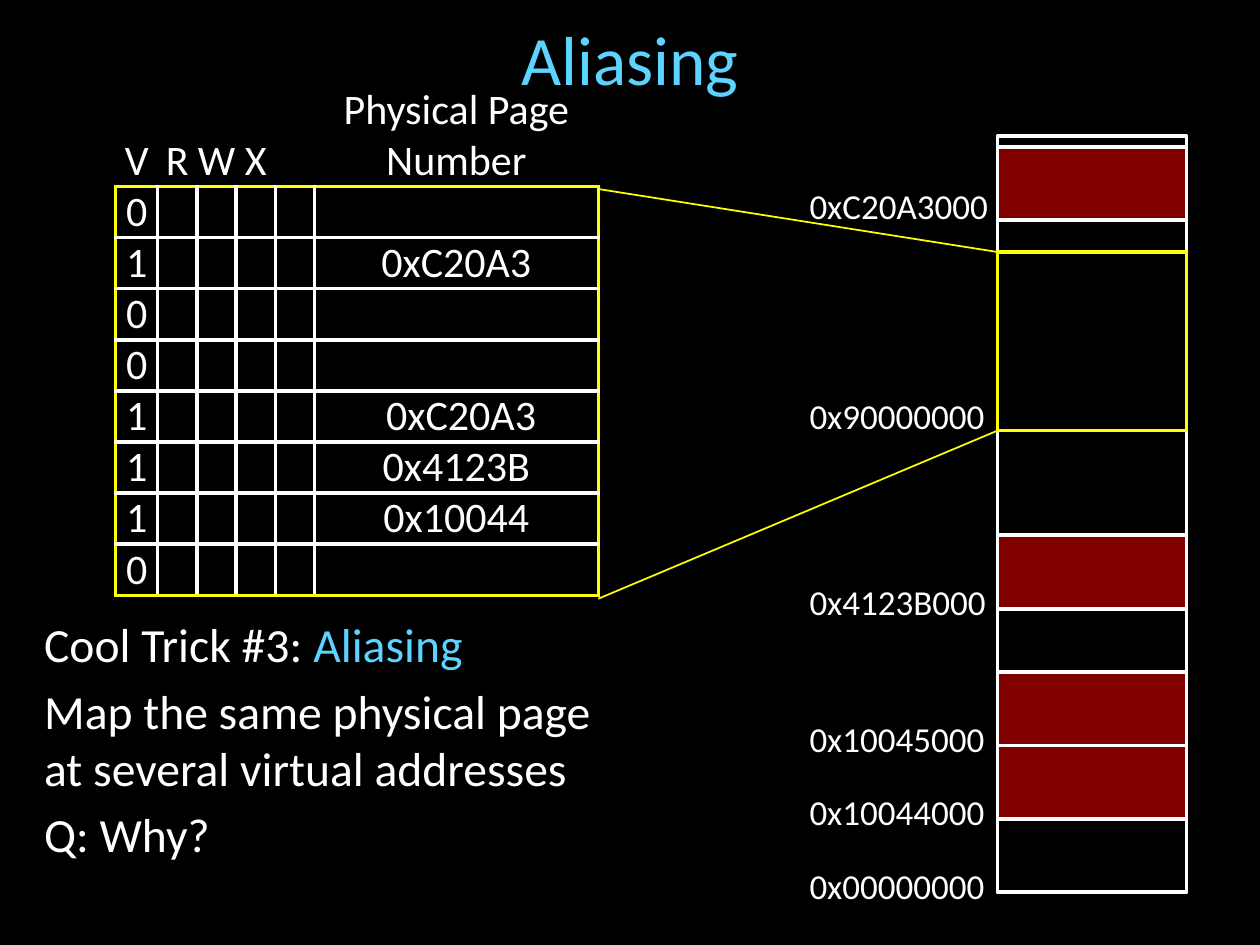
from dataclasses import dataclass

from lxml import etree
from pptx import Presentation
from pptx.dml.color import RGBColor
from pptx.enum import shapes, text
from pptx.oxml import ns
from pptx.util import Cm, Pt


@dataclass(frozen=True)
class Theme:
    font: str = "Calibri"
    back: str = "000000"
    ink: str = "FFFFFF"
    accent: str = "5DD4FF"
    mapped: str = "800000"
    window: str = "FFFF00"
    title_size: float = 39.6
    body_size: float = 27.2
    table_size: float = 24
    label_size: float = 20
    border: float = 2.25
    guide: float = 1


@dataclass(frozen=True)
class Box:
    """A region of the slide, in centimetres."""
    left: float
    top: float
    width: float
    height: float

    def emu(self):
        return [Cm(v) for v in (self.left, self.top, self.width, self.height)]


THEME = Theme()
CENTER = text.PP_ALIGN.CENTER

COLUMNS = [0.85, 0.79, 0.79, 0.79, 0.79, 5.72]
HEADINGS = ["V", "R", "W", "X", "", "Physical Page Number"]
ENTRIES = [("0", ""), ("1", "0xC20A3"), ("0", ""), ("0", ""),
           ("1", " 0xC20A3"), ("1", "0x4123B"), ("1", "0x10044"), ("0", "")]
HEADING_HEIGHT, ENTRY_HEIGHT = 2.06, 1.03

# Lengths below are measured down from the top of the memory column.
PAGE_HEIGHT = 1.48
MAPPED_TOPS = [0.21, 8.04, 10.8, 12.28]
WINDOW_TOP, WINDOW_HEIGHT = 2.33, 3.6
LABEL_OFFSET, LABEL_WIDTH, LABEL_HEIGHT = 4.04, 4.3, 1.11
# address, level it marks, rise of the label above that level
ADDRESSES = [("0xC20A3000", 1.69, 0.84), ("0x90000000", 5.93, 0.86),
             ("0x4123B000", 9.52, 0.69), ("0x10045000", 12.28, 0.69),
             ("0x10044000", 13.76, 0.69), ("0x00000000", 15.24, 0.69)]


def add_span(para, words, size, color=THEME.ink):
    span = para.add_run()
    span.text = words
    span.font.name = THEME.font
    span.font.size = Pt(size)
    span.font.color.rgb = RGBColor.from_string(color)


def add_text_frame(page, box):
    frame = page.shapes.add_textbox(*box.emu()).text_frame
    frame.word_wrap = True
    return frame


def add_block(page, box, line, fill=None):
    block = page.shapes.add_shape(shapes.MSO_SHAPE.RECTANGLE, *box.emu())
    block.shadow.inherit = False
    if fill:
        block.fill.solid()
        block.fill.fore_color.rgb = RGBColor.from_string(fill)
    else:
        block.fill.background()
    block.line.color.rgb = RGBColor.from_string(line)
    block.line.width = Pt(THEME.border)


def set_borders(cell, colors):
    """Draw left, right, top and bottom borders; None leaves a side bare."""
    props = cell._tc.get_or_add_tcPr()
    for side, color in zip("LRTB", colors):
        line = etree.SubElement(props, ns.qn(f"a:ln{side}"), w=str(Pt(THEME.border)))
        if color:
            fill = etree.SubElement(line, ns.qn("a:solidFill"))
            etree.SubElement(fill, ns.qn("a:srgbClr"), val=color)
        else:
            etree.SubElement(line, ns.qn("a:noFill"))


def add_title(page, box):
    frame = add_text_frame(page, box)
    frame.vertical_anchor = text.MSO_ANCHOR.MIDDLE
    para = frame.paragraphs[0]
    para.alignment = CENTER
    add_span(para, "Aliasing", THEME.title_size, THEME.accent)


def add_page_table(page, box):
    rows = [HEADINGS] + [[valid, "", "", "", "", number] for valid, number in ENTRIES]
    last_row, last_col = len(rows) - 1, len(COLUMNS) - 1
    table = page.shapes.add_table(len(rows), len(COLUMNS), *box.emu()).table
    table.first_row = table.horz_banding = False
    for column, width in zip(table.columns, COLUMNS):
        column.width = Cm(width)
    for r, words_in_row in enumerate(rows):
        table.rows[r].height = Cm(ENTRY_HEIGHT if r else HEADING_HEIGHT)
        for c, words in enumerate(words_in_row):
            cell = table.cell(r, c)
            cell.margin_left = cell.margin_right = 0
            cell.margin_top = cell.margin_bottom = 0
            cell.vertical_anchor = text.MSO_ANCHOR.MIDDLE if r else text.MSO_ANCHOR.BOTTOM
            if r:
                outer = (c == 0, c == last_col, r == 1, r == last_row)
                set_borders(cell, [THEME.window if edge else THEME.ink for edge in outer])
            else:
                set_borders(cell, [None, None, None, THEME.window])
            cell.fill.background()
            para = cell.text_frame.paragraphs[0]
            para.alignment = CENTER
            if words:
                add_span(para, words, THEME.table_size)


def add_memory(page, box):
    """Address space with its mapped pages, window and address labels."""
    add_block(page, box, THEME.ink)
    for top in MAPPED_TOPS:
        add_block(page, Box(box.left, box.top + top, box.width, PAGE_HEIGHT),
                  THEME.ink, THEME.mapped)
    add_block(page, Box(box.left, box.top + WINDOW_TOP, box.width, WINDOW_HEIGHT),
              THEME.window)
    for address, level, rise in ADDRESSES:
        label = Box(box.left - LABEL_OFFSET, box.top + level - rise,
                    LABEL_WIDTH, LABEL_HEIGHT)
        frame = add_text_frame(page, label)
        add_span(frame.paragraphs[0], address, THEME.label_size)


def add_guides(page, table, memory):
    """Lines that spread the page table over its window in memory."""
    start = table.left + table.width
    window = memory.top + WINDOW_TOP
    for begin, end in [(3.81, window), (12.07, window + WINDOW_HEIGHT)]:
        guide = page.shapes.add_connector(shapes.MSO_CONNECTOR.STRAIGHT,
                                          Cm(start), Cm(begin), Cm(memory.left), Cm(end))
        guide.line.color.rgb = RGBColor.from_string(THEME.window)
        guide.line.width = Pt(THEME.guide)
        etree.SubElement(guide._element.spPr, ns.qn("a:effectLst"))


def add_body(page, box):
    frame = add_text_frame(page, box)
    trick, mapping, question = frame.paragraphs[0], frame.add_paragraph(), frame.add_paragraph()
    for para in (trick, mapping, question):
        para.space_before = Pt(5.4)
    add_span(trick, "Cool Trick #3: ", THEME.body_size)
    add_span(trick, "Aliasing", THEME.body_size, THEME.accent)
    add_span(mapping, "Map the same physical page", THEME.body_size)
    mapping.add_line_break()
    add_span(mapping, "at several virtual addresses", THEME.body_size)
    add_span(question, "Q: Why?", THEME.body_size)


def main():
    deck = Presentation()
    deck.slide_width, deck.slide_height = Cm(25.4), Cm(19.05)
    page = deck.slides.add_slide(deck.slide_layouts[6])
    page.background.fill.solid()
    page.background.fill.fore_color.rgb = RGBColor.from_string(THEME.back)

    table = Box(2.33, 1.7, sum(COLUMNS), HEADING_HEIGHT + len(ENTRIES) * ENTRY_HEIGHT)
    memory = Box(20.11, 2.75, 3.81, 15.24)
    add_title(page, Box(0.64, 0.43, 24.13, 1.47))
    add_body(page, Box(0.64, 12.27, 24.13, 6.78))
    add_page_table(page, table)
    add_memory(page, memory)
    add_guides(page, table, memory)
    deck.save("out.pptx")


if __name__ == "__main__":
    main()
